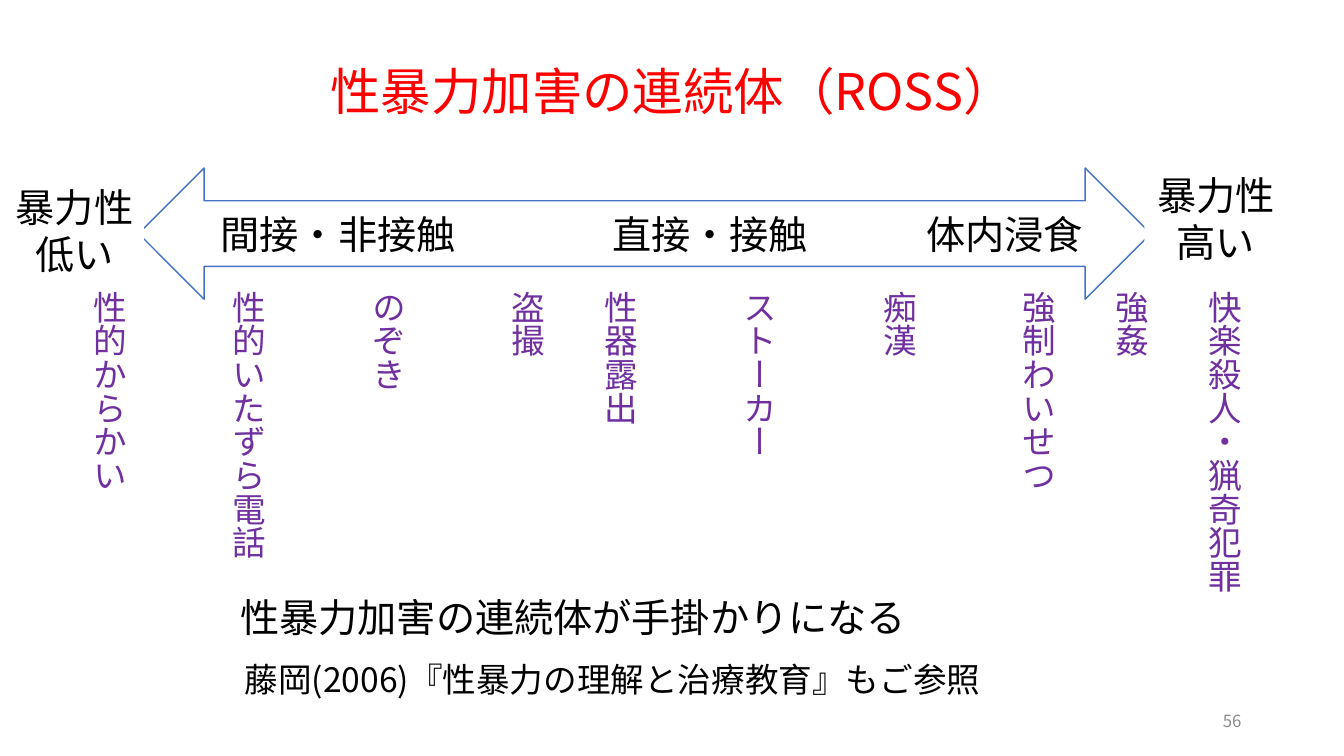
from lxml import etree
from pptx import Presentation, util as u
from pptx.dml.color import RGBColor
from pptx.enum import shapes, text
from pptx.oxml.ns import qn

PX = 9525
FONT = "Noto Sans CJK JP"
HUES = {"red": "FF0000", "black": "000000", "violet": "7030A0",
        "gray": "8C8C8C", "white": "FFFFFF", "blue": "4472C4"}
MID = text.MSO_ANCHOR.MIDDLE
CENTER = text.PP_ALIGN.CENTER


class Deck:
    """Holds the style and the current slide."""

    def __init__(self):
        self.prs = Presentation()
        self.prs.slide_width, self.prs.slide_height = 1280 * PX, 720 * PX
        self.slide = self.prs.slides.add_slide(self.prs.slide_layouts[1])

    def hue(self, name):
        return RGBColor.from_string(HUES[name])

    def place(self, item, box):
        for key, val in zip(("left", "top", "width", "height"), box):
            setattr(item, key, val * PX)

    def letter(self, item, lines, size, hue="black", inset=None, frame=None, **form):
        tf = item.text_frame
        look = {"word_wrap": True, "auto_size": text.MSO_AUTO_SIZE.NONE}
        if inset is not None:
            for side in ("left", "top", "right", "bottom"):
                look["margin_" + side] = inset
        look.update(frame or {})
        for key, val in look.items():
            setattr(tf, key, val)
        for i, line in enumerate(lines):
            para = tf.add_paragraph() if i else tf.paragraphs[0]
            for key, val in form.items():
                setattr(para, key, val)
            run = para.add_run()
            run.text = line
            for key, val in {"size": u.Pt(size), "name": FONT}.items():
                setattr(run.font, key, val)
            run.font.color.rgb = self.hue(hue)
            etree.SubElement(run._r.get_or_add_rPr(), qn("a:ea"), typeface=FONT)
        return tf

    def title(self, box, line, size, hue):
        item = self.slide.shapes.title
        self.place(item, box)
        self.letter(item, [line], size, hue, frame={"vertical_anchor": MID},
                    alignment=CENTER, line_spacing=0.9)

    def columns(self, box, items, size, hue, pitch):
        """Vertical list; each item carries the blank columns before it."""
        item = self.slide.placeholders[1]
        self.place(item, box)
        tf = self.letter(item, [name for name, _ in items], size, hue, 0,
                         {"vertical_anchor": text.MSO_ANCHOR.TOP},
                         line_spacing=u.Pt(pitch))
        tf._txBody.bodyPr.set("vert", "eaVert")
        for para, (_, gap) in zip(tf.paragraphs, items):
            para.space_before = u.Pt(gap * pitch)
            props = para._p.get_or_add_pPr()
            props.set("marL", "0")
            props.set("indent", "0")
            etree.SubElement(props, qn("a:buNone"))

    def label(self, box, line, size, hue="black", **form):
        item = self.slide.shapes.add_textbox(*(n * PX for n in box))
        self.letter(item, [line], size, hue, **form)

    def shape(self, kind, box, lines, size, edge=None, frame=None, **form):
        item = self.slide.shapes.add_shape(kind, *(n * PX for n in box))
        item.shadow.inherit = False
        item.fill.solid()
        item.fill.fore_color.rgb = self.hue("white")
        if edge:
            item.line.color.rgb = self.hue(edge)
            item.line.width = u.Pt(1)
        else:
            item.line.fill.background()
        return self.letter(item, lines, size,
                           frame={"vertical_anchor": MID, **(frame or {})}, **form)

    def tabs(self, para, stops):
        tabs = etree.SubElement(para._p.get_or_add_pPr(), qn("a:tabLst"))
        for stop in stops:
            etree.SubElement(tabs, qn("a:tab"), pos=str(stop * PX), algn="l")


def main():
    deck = Deck()

    # Title and main remark
    deck.title((88, 38, 1104, 103), "性暴力加害の連続体（ROSS）", 36, "red")
    deck.label((229, 581, 672, 30), "性暴力加害の連続体が手掛かりになる", 28,
               inset=0, line_spacing=u.Pt(22))

    # Continuum arrow with its three stages
    stages = "\t".join(("間接・非接触", "直接・接触", "体内浸食"))
    arrow = deck.shape(shapes.MSO_SHAPE.LEFT_RIGHT_ARROW, (132, 160, 964, 125),
                       [stages], 28, "blue", {"margin_left": 47 * PX, "margin_right": 0},
                       alignment=text.PP_ALIGN.LEFT)
    deck.tabs(arrow.paragraphs[0], (373, 672))

    # Acts, from the right edge to the left
    acts = [("快楽殺人・猟奇犯罪", 0), ("強姦", 1), ("強制わいせつ", 1), ("痴漢", 2),
            ("ストーカー", 2), ("性器露出", 2), ("盗撮", 1), ("のぞき", 2),
            ("性的いたずら電話", 2), ("性的からかい", 2)]
    deck.columns((36, 277, 1155, 292), acts, 24, "violet", 33.2)

    # Ends of the scale
    for box, level in (((5, 171, 132, 96), "低い"), ((1090, 160, 136, 96), "高い")):
        deck.shape(shapes.MSO_SHAPE.RECTANGLE, box, ["暴力性", level], 28, alignment=CENTER)

    # Reference and page number
    deck.label((233, 643, 797, 46), "藤岡(2006)『性暴力の理解と治療教育』もご参照", 24,
               inset=0, line_spacing=u.Pt(17.4))
    deck.label((904, 667, 288, 38), "56", 12, "gray", frame={"vertical_anchor": MID},
               alignment=text.PP_ALIGN.RIGHT)

    deck.prs.save("out.pptx")


if __name__ == "__main__":
    main()
